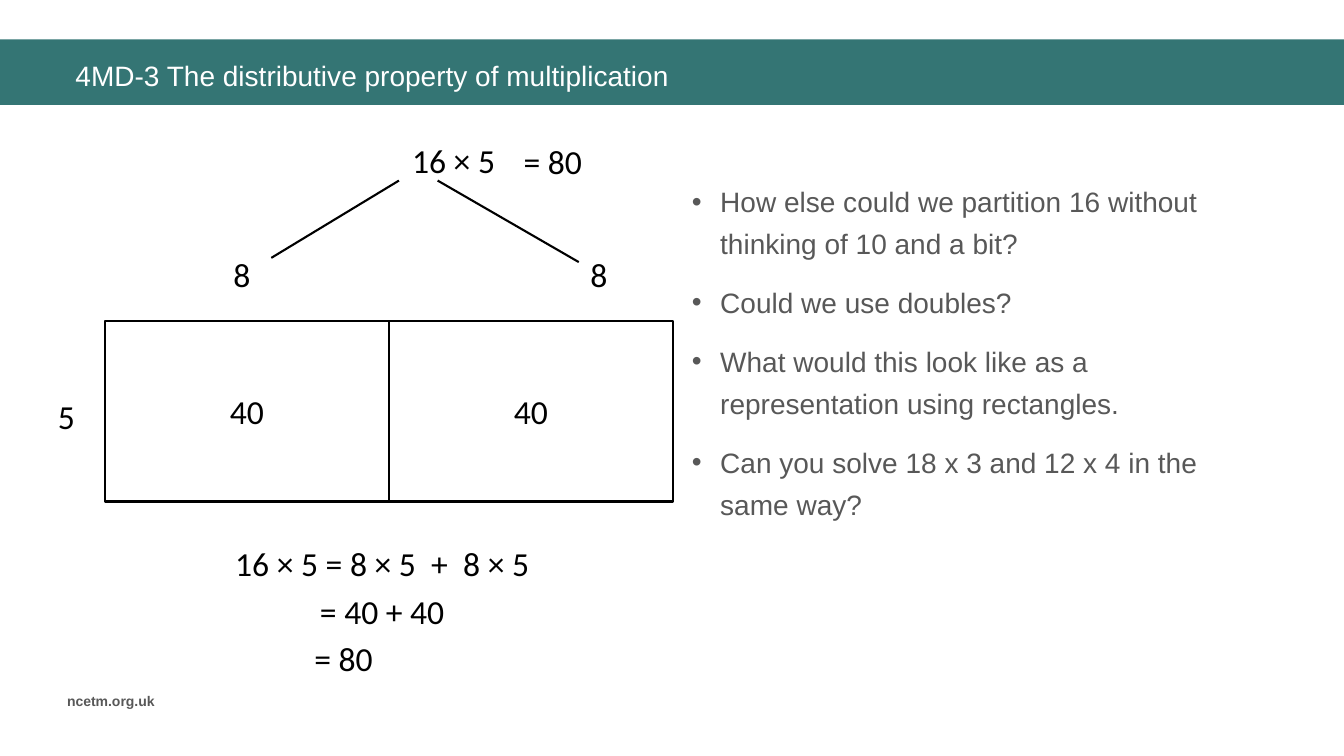
from dataclasses import dataclass

from lxml import etree
from pptx import Presentation
from pptx.dml.color import RGBColor
from pptx.enum.shapes import MSO_CONNECTOR, MSO_SHAPE
from pptx.enum.text import MSO_ANCHOR, PP_ALIGN
from pptx.oxml.ns import qn
from pptx.util import Inches, Pt

RECTANGLE = MSO_SHAPE.RECTANGLE
STRAIGHT = MSO_CONNECTOR.STRAIGHT
MIDDLE, TOP = MSO_ANCHOR.MIDDLE, MSO_ANCHOR.TOP
LEFT, CENTER = PP_ALIGN.LEFT, PP_ALIGN.CENTER

SLIDE_WIDTH, SLIDE_HEIGHT = Inches(13.33), Inches(7.5)
COLUMN, ROW = SLIDE_WIDTH / 160, SLIDE_HEIGHT / 90


@dataclass(frozen=True)
class Theme:
    teal: RGBColor = RGBColor(0x34, 0x75, 0x74)
    white: RGBColor = RGBColor(0xFF, 0xFF, 0xFF)
    grey: RGBColor = RGBColor(0x58, 0x58, 0x58)
    black: RGBColor = RGBColor(0, 0, 0)
    prose: str = "Arial"
    maths: str = "Calibri"
    prose_size: int = 20
    maths_size: int = 24
    footer_size: int = 10
    stroke: float = 1.5


THEME = Theme()


@dataclass(frozen=True)
class Box:
    left: float
    top: float
    width: float
    height: float

    def inner(self, column, row, width, height):
        return Box(self.left + column, self.top + row, width, height)

    def emu(self):
        return (round(self.left * COLUMN), round(self.top * ROW),
                round(self.width * COLUMN), round(self.height * ROW))


def add_frame(slide, box, anchor=TOP, wrap=True):
    frame = slide.shapes.add_textbox(*box.emu()).text_frame
    frame.word_wrap = wrap
    frame.vertical_anchor = anchor
    return frame


def write(paragraph, text, font, size, color, align=LEFT, bold=False):
    paragraph.alignment = align
    run = paragraph.add_run()
    run.text = text
    run.font.name = font
    run.font.size = Pt(size)
    run.font.color.rgb = color
    run.font.bold = bold


def add_maths(slide, box, text, column, row, width):
    label = box.inner(column - width / 2, row - 3, width, 6)
    frame = add_frame(slide, label, MIDDLE, wrap=False)
    write(frame.paragraphs[0], text, THEME.maths, THEME.maths_size,
          THEME.black, CENTER)


def add_line(slide, box, start, end):
    ends = [box.inner(*point, 0, 0).emu()[:2] for point in (start, end)]
    line = slide.shapes.add_connector(STRAIGHT, *ends[0], *ends[1])
    line.line.color.rgb = THEME.black
    line.line.width = Pt(THEME.stroke)
    etree.SubElement(line._element.spPr, qn("a:effectLst"))


def add_rectangle(slide, box):
    rectangle = slide.shapes.add_shape(RECTANGLE, *box.emu())
    rectangle.shadow.inherit = False
    return rectangle


def header(slide, box):
    band = add_rectangle(slide, box)
    band.fill.solid()
    band.fill.fore_color.rgb = THEME.teal
    band.line.fill.background()
    title = add_frame(slide, box.inner(7.8, 1.4, 147.8, 5.7), MIDDLE)
    write(title.paragraphs[0],
          "4MD-3 The distributive property of multiplication",
          THEME.prose, THEME.prose_size, THEME.white)


def footer(slide, box):
    write(add_frame(slide, box).paragraphs[0], "ncetm.org.uk", THEME.prose,
          THEME.footer_size, THEME.grey, bold=True)


def partition_tree(slide, box):
    add_maths(slide, box, "16 × 5", 28, 3, 13.9)
    add_maths(slide, box, "= 80", 39.8, 3.2, 10.7)
    for column in (2.8, 45.3):
        add_maths(slide, box, "8", column, 16.6, 4.6)
    add_line(slide, box, (6.3, 14.7), (21.5, 5.5))
    add_line(slide, box, (42.9, 15.2), (26.1, 5.5))


def area_model(slide, box):
    margin = 6.9
    width = box.width - margin
    outline = add_rectangle(slide, box.inner(margin, 0, width, box.height))
    outline.fill.background()
    outline.line.color.rgb = THEME.black
    outline.line.width = Pt(THEME.stroke)
    middle = margin + width / 2
    add_line(slide, box, (middle, 0), (middle, box.height))
    add_maths(slide, box, "5", 2.3, 11.3, 4.6)
    for share in (1 / 4, 3 / 4):
        add_maths(slide, box, "40", margin + width * share, 10.7, 6.8)


def working(slide, box):
    steps = [("16 × 5 = 8 × 5  +  8 × 5", 22.5, 44.9),
             ("= 40 + 40", 22.5, 20),
             ("= 80", 17.9, 10.7)]
    for index, (step, column, width) in enumerate(steps):
        add_maths(slide, box, step, column, 3 + 5.7 * index, width)


def add_bullet(paragraph):
    properties = paragraph._p.get_or_add_pPr()
    indent = Inches(0.28)
    properties.set("marL", str(indent))
    properties.set("indent", str(-indent))
    color = etree.SubElement(properties, qn("a:buClr"))
    etree.SubElement(color, qn("a:srgbClr")).set("val", str(THEME.grey))
    etree.SubElement(properties, qn("a:buFont")).set("typeface", THEME.prose)
    etree.SubElement(properties, qn("a:buChar")).set("char", "•")


def questions(slide, box):
    frame = add_frame(slide, box)
    prompts = ["How else could we partition 16 without thinking of 10 and a bit?",
               "Could we use doubles?",
               "What would this look like as a representation using rectangles.",
               "Can you solve 18 x 3 and 12 x 4 in the same way?"]
    for index, prompt in enumerate(prompts):
        paragraph = frame.add_paragraph() if index else frame.paragraphs[0]
        add_bullet(paragraph)
        paragraph.line_spacing = 1.25
        paragraph.space_before = Pt(6 if index else 0)
        paragraph.space_after = Pt(6)
        write(paragraph, prompt, THEME.prose, THEME.prose_size, THEME.grey)


def main():
    deck = Presentation()
    deck.slide_width, deck.slide_height = SLIDE_WIDTH, SLIDE_HEIGHT
    slide = deck.slides.add_slide(deck.slide_layouts[6])
    header(slide, Box(0, 4.7, 160, 7.8))
    footer(slide, Box(6.8, 81.8, 14.5, 3.2))
    partition_tree(slide, Box(26, 16, 48, 20))
    area_model(slide, Box(5.6, 38.2, 74.5, 21.5))
    working(slide, Box(23, 64, 45, 18))
    questions(slide, Box(81.2, 20.4, 70.8, 53.9))
    deck.save("out.pptx")


if __name__ == "__main__":
    main()
